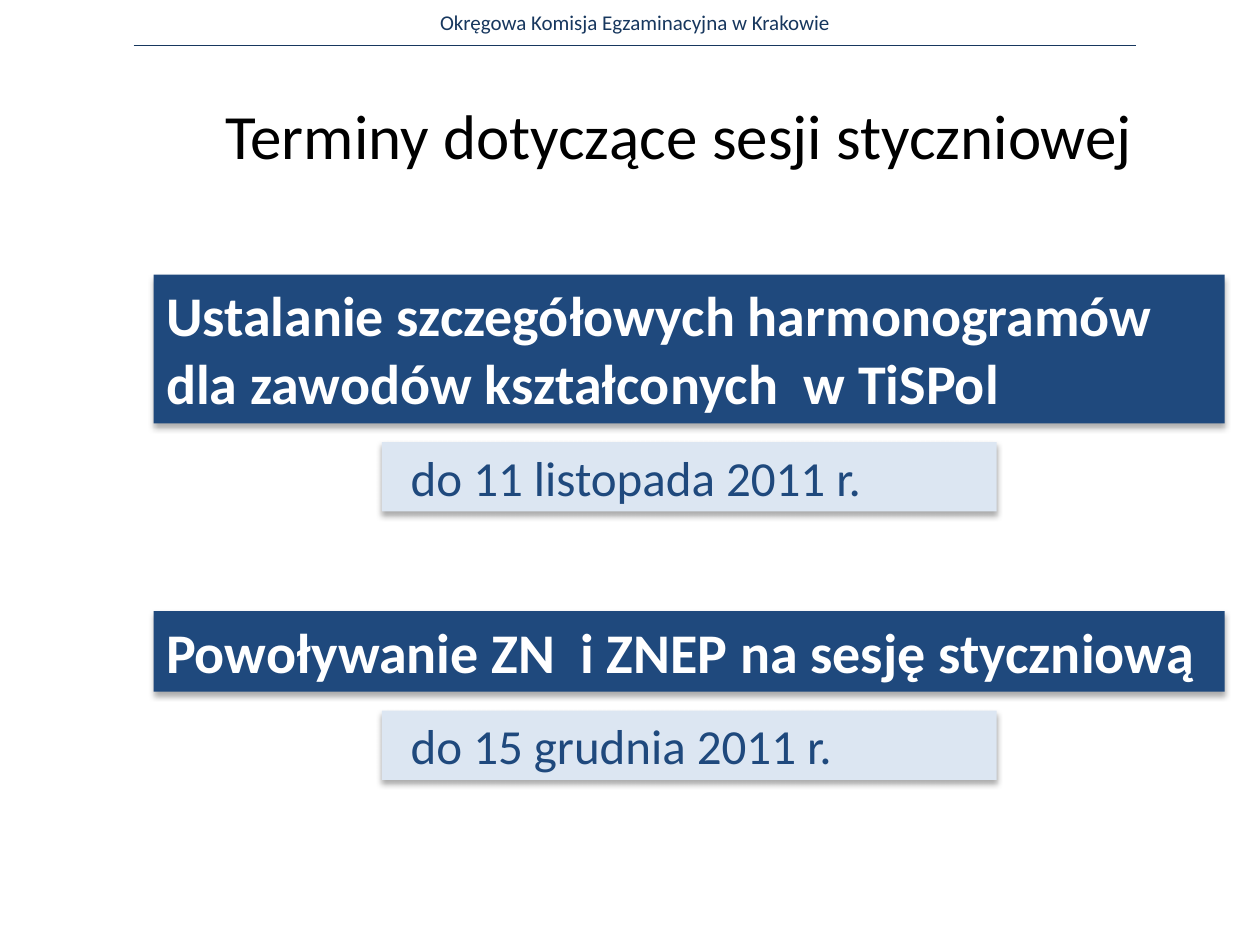
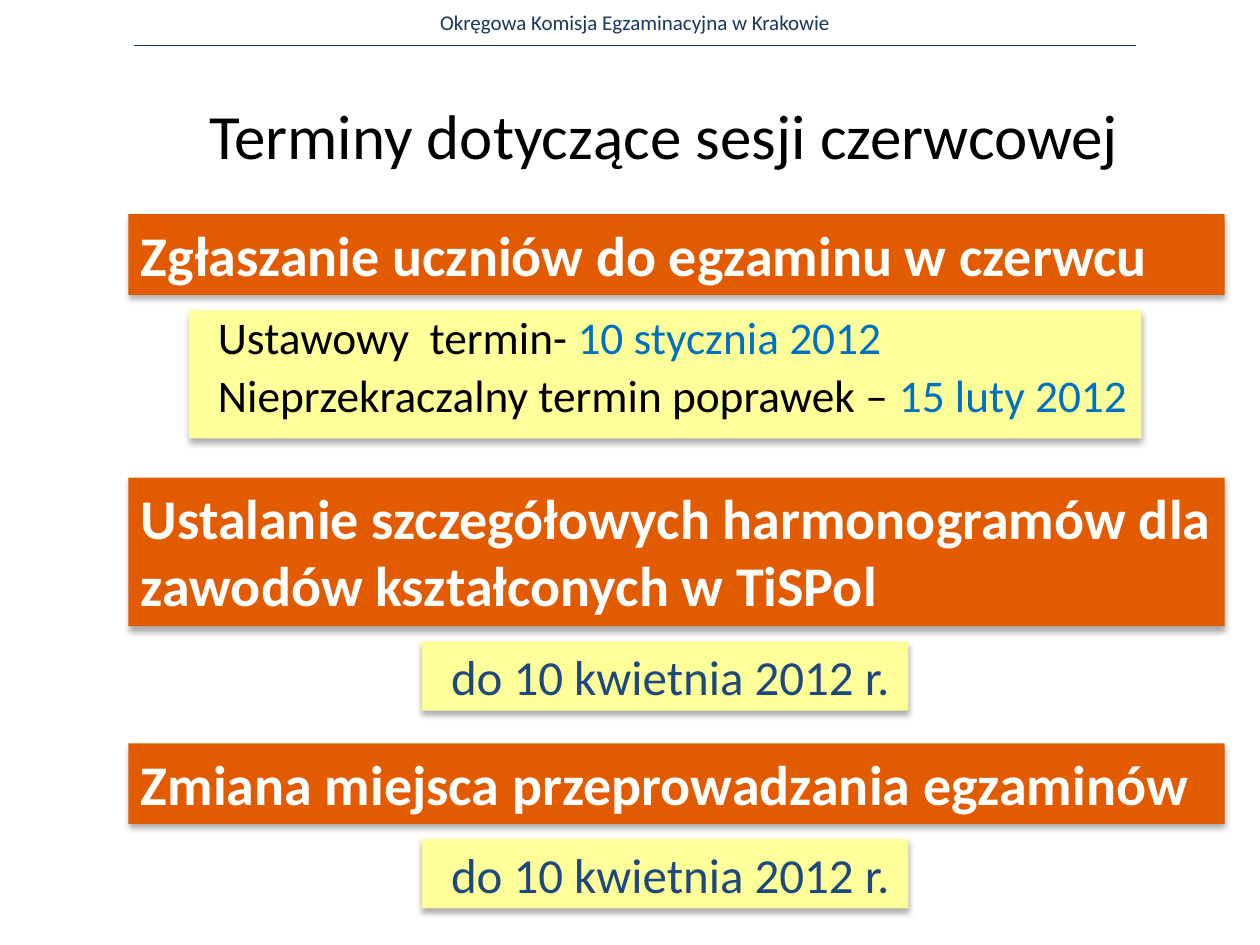
"""Build two slides with the deadlines of the January and June exam sessions."""
from lxml.etree import SubElement
from pptx import Presentation
from pptx.dml.color import RGBColor
from pptx.enum.shapes import MSO_CONNECTOR, MSO_SHAPE
from pptx.enum.text import MSO_ANCHOR, MSO_AUTO_SIZE, PP_ALIGN
from pptx.oxml.ns import qn
from pptx.util import Inches, Pt

NAVY = RGBColor(0x1F, 0x49, 0x7D)
HEADER_NAVY = RGBColor(0x17, 0x37, 0x5E)
PALE_BLUE = RGBColor(0xDC, 0xE6, 0xF2)
ORANGE = RGBColor(0xE2, 0x5B, 0x00)
PALE_YELLOW = RGBColor(0xFF, 0xFF, 0x99)
DATE_BLUE = RGBColor(0x00, 0x70, 0xC0)
WHITE = RGBColor(0xFF, 0xFF, 0xFF)
BLACK = RGBColor(0x00, 0x00, 0x00)

FONT = "Calibri"
COLUMNS, ROWS = 100, 75
BANNER_RIGHT = 97.2
BANNER_PADDING, BANNER_LINE = 1, 5.4
DEADLINE_HEIGHT = 5.5


class SessionDeck:
    """Holds the presentation, the current slide and the colours of its session."""

    def __init__(self):
        self.deck = Presentation()
        self.deck.slide_width, self.deck.slide_height = Inches(10), Inches(7.5)

    def x(self, columns):
        return round(self.deck.slide_width * columns / COLUMNS)

    def y(self, rows):
        return round(self.deck.slide_height * rows / ROWS)

    def box(self, left, top, width, height):
        return self.x(left), self.y(top), self.x(width), self.y(height)

    def format_runs(self, paragraph, size, color, bold=False):
        for run in paragraph.runs:
            run.font.name, run.font.size, run.font.bold = FONT, Pt(size), bold
            run.font.color.rgb = color

    def start_slide(self, title, title_left, banner_left, axis, gap, banner_fill, deadline_fill):
        self.slide = self.deck.slides.add_slide(self.deck.slide_layouts[5])
        self.banner_left, self.axis, self.gap = banner_left, axis, gap
        self.banner_fill, self.deadline_fill = banner_fill, deadline_fill
        self.header()
        self.title(title, title_left)

    def header(self):
        institution = self.slide.shapes.add_textbox(*self.box(6.7, 0.3, 87.4, 3))
        frame = institution.text_frame
        frame.word_wrap = True
        frame.auto_size = MSO_AUTO_SIZE.SHAPE_TO_FIT_TEXT
        frame.text = "Okręgowa Komisja Egzaminacyjna w Krakowie"
        frame.paragraphs[0].alignment = PP_ALIGN.CENTER
        self.format_runs(frame.paragraphs[0], 12, HEADER_NAVY)
        rule = self.slide.shapes.add_connector(
            MSO_CONNECTOR.STRAIGHT, self.x(10.6), self.y(3.6), self.x(90.2), self.y(3.6))
        rule.line.color.rgb = HEADER_NAVY
        rule.line.width = Pt(0.5)
        SubElement(rule._element.spPr, qn("a:effectLst"))

    def title(self, text, left):
        heading = self.slide.shapes.title
        heading.left, heading.top, heading.width, heading.height = self.box(left, 4.4, 85, 12.5)
        frame = heading.text_frame
        frame.text = text
        frame.vertical_anchor = MSO_ANCHOR.MIDDLE
        frame.paragraphs[0].alignment = PP_ALIGN.CENTER
        self.format_runs(frame.paragraphs[0], 36, BLACK)

    def panel(self, left, top, width, height, fill):
        panel = self.slide.shapes.add_shape(MSO_SHAPE.RECTANGLE, *self.box(left, top, width, height))
        panel.fill.solid()
        panel.fill.fore_color.rgb = fill
        panel.line.fill.background()
        self.cast_shadow(panel)
        panel.text_frame.word_wrap = True
        panel.text_frame.vertical_anchor = MSO_ANCHOR.TOP
        return panel.text_frame

    def cast_shadow(self, panel):
        panel.shadow.inherit = False
        effects = panel._element.spPr.find(qn("a:effectLst"))
        shadow = SubElement(effects, qn("a:outerShdw"), blurRad=str(Pt(3.5)),
                            dist=str(Pt(2.2)), dir="5400000", algn="ctr", rotWithShape="0")
        color = SubElement(shadow, qn("a:srgbClr"), val=str(BLACK))
        SubElement(color, qn("a:alpha"), val="32000")

    def banner(self, top, text, lines=1):
        height = BANNER_PADDING + BANNER_LINE * lines
        frame = self.panel(self.banner_left, top, BANNER_RIGHT - self.banner_left,
                           height, self.banner_fill)
        frame.auto_size = MSO_AUTO_SIZE.SHAPE_TO_FIT_TEXT
        frame.text = text
        frame.paragraphs[0].alignment = PP_ALIGN.LEFT
        self.format_runs(frame.paragraphs[0], 32, WHITE, bold=True)
        return top + height + self.gap

    def deadline_panel(self, top, width, height):
        frame = self.panel(self.axis - width / 2, top, width, height, self.deadline_fill)
        frame.margin_left = self.x(2.3)
        frame.margin_right = self.x(0.4)
        frame.margin_top = frame.margin_bottom = self.y(0.4)
        return frame

    def deadline(self, top, width, text):
        frame = self.deadline_panel(top, width, DEADLINE_HEIGHT)
        frame.text = text
        frame.paragraphs[0].alignment = PP_ALIGN.LEFT
        self.format_runs(frame.paragraphs[0], 28, NAVY)

    def dated_terms(self, top, width, height, terms):
        frame = self.deadline_panel(top, width, height)
        for index, (label, date) in enumerate(terms):
            term = frame.add_paragraph() if index else frame.paragraphs[0]
            term.text = label
            term.alignment = PP_ALIGN.LEFT
            term.line_spacing = 0.9
            if index:
                term.space_before = Pt(5.2)
            term.add_run().text = date
            self.format_runs(term, 25.9, BLACK)
            term.runs[-1].font.color.rgb = DATE_BLUE


def main():
    session = SessionDeck()

    session.start_slide("Terminy dotyczące sesji styczniowej", title_left=11.4, banner_left=12.2,
                        axis=54.7, gap=1.5, banner_fill=NAVY, deadline_fill=PALE_BLUE)
    january = [
        (21.8, "Ustalanie szczegółowych harmonogramów dla zawodów kształconych  w TiSPol", 2,
         "do 11 listopada 2011 r."),
        (48.5, "Powoływanie ZN  i ZNEP na sesję styczniową", 1, "do 15 grudnia 2011 r."),
    ]
    for top, task, lines, date in january:
        session.deadline(session.banner(top, task, lines), 48.8, date)

    session.start_slide("Terminy dotyczące sesji czerwcowej", title_left=10.2, banner_left=10.2,
                        axis=52.8, gap=1.2, banner_fill=ORANGE, deadline_fill=PALE_YELLOW)
    terms_top = session.banner(17, "Zgłaszanie uczniów do egzaminu w czerwcu")
    session.dated_terms(terms_top, 75.6, 10.2, [
        ("Ustawowy  termin- ", "10 stycznia 2012"),
        ("Nieprzekraczalny termin poprawek – ", "15 luty 2012"),
    ])
    june = [
        (37.9, "Ustalanie szczegółowych harmonogramów dla zawodów kształconych w TiSPol", 2),
        (59, "Zmiana miejsca przeprowadzania egzaminów", 1),
    ]
    for top, task, lines in june:
        session.deadline(session.banner(top, task, lines), 38.6, "do 10 kwietnia 2012 r.")

    session.deck.save("out.pptx")


if __name__ == "__main__":
    main()
